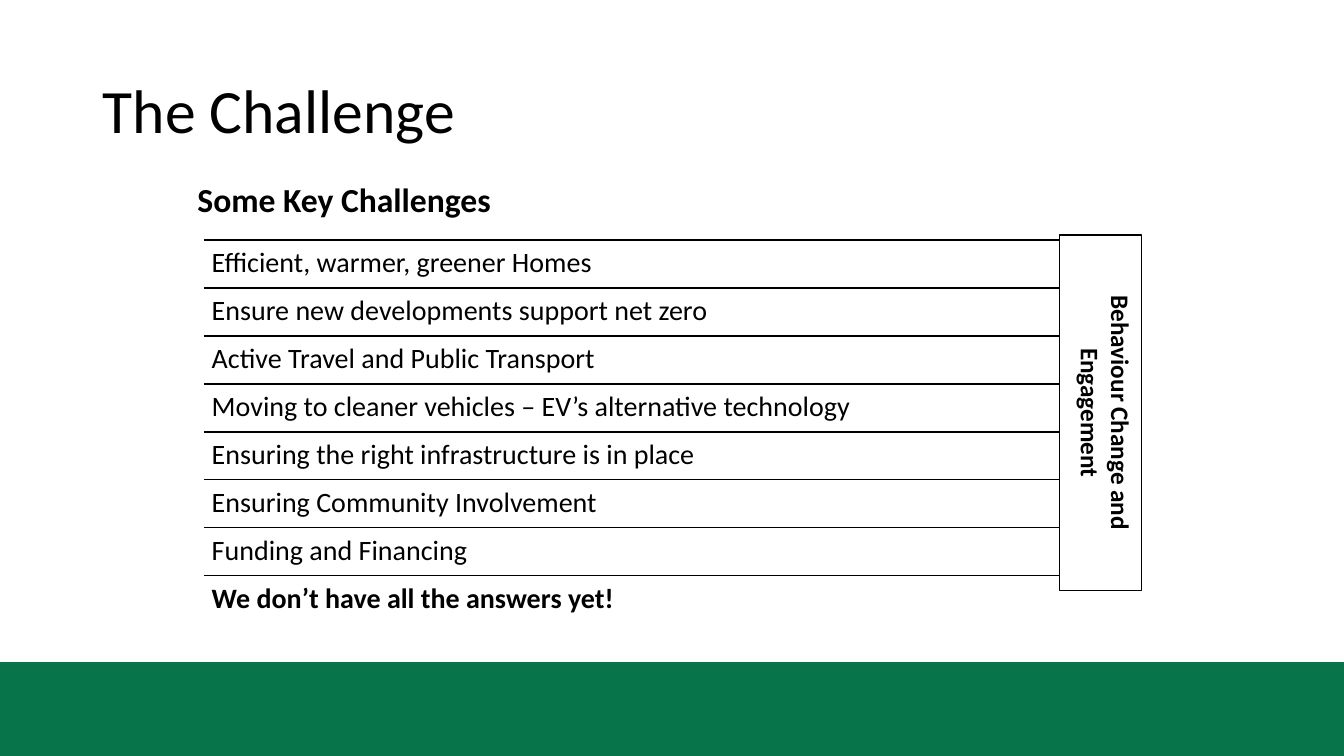
from dataclasses import dataclass, field

from lxml.etree import SubElement
from pptx import Presentation
from pptx.dml.color import RGBColor as Rgb
from pptx.enum.shapes import MSO_CONNECTOR as Conn, MSO_SHAPE as Kind
from pptx.enum.text import MSO_ANCHOR as Anchor, MSO_AUTO_SIZE as Auto, PP_ALIGN as Align
from pptx.oxml.ns import qn
from pptx.util import Inches, Pt

HUES = {"ink": "000000", "paper": "FFFFFF", "band": "07744A"}
LEFT, TOP, WIDTH, PITCH = 2.02, 2.38, 8.58, 0.476


@dataclass
class Label:
    text: str
    box: tuple[float, float, float, float]
    size: int
    bold: bool = False
    space: float | None = 0.9
    align: Align = Align.LEFT
    frame: dict = field(default_factory=dict)


ROWS = [
    "Efficient, warmer, greener Homes",
    "Ensure new developments support net zero",
    "Active Travel and Public Transport",
    "Moving to cleaner vehicles – EV’s alternative technology",
    "Ensuring the right infrastructure is in place",
    "Ensuring Community Involvement",
    "Funding and Financing",
    "We don’t have all the answers yet!",
]
TITLE = Label("The Challenge", (0.92, 0.4, 11.5, 1.45), 44,
              frame={"vertical_anchor": Anchor.MIDDLE})
HEAD = Label("Some Key Challenges", (1.86, 1.53, 4.42, 0.7), 24, True,
             frame={"vertical_anchor": Anchor.BOTTOM})
SIDE = Label("Behaviour Change and Engagement", (10.51, 2.33, 0.81, 3.53), 18, True,
             None, Align.CENTER, {"auto_size": Auto.SHAPE_TO_FIT_TEXT})
PADS = {f"margin_{side}": Inches(0.08) for side in ("left", "top", "right", "bottom")}


def hue(name: str) -> Rgb:
    """Return the named colour."""
    return Rgb.from_string(HUES[name])


def apply(target, values: dict) -> None:
    """Set each attribute from a dict of values."""
    for name, value in values.items():
        setattr(target, name, value)


def write(shape, label: Label) -> None:
    """Place a shape and give it its formatted text."""
    places = map(Inches, label.box)
    apply(shape, dict(zip(("left", "top", "width", "height"), places)))
    frame = shape.text_frame
    base = {"word_wrap": True, "auto_size": Auto.NONE, "vertical_anchor": Anchor.TOP}
    apply(frame, base | label.frame)
    frame.text = label.text
    para = frame.paragraphs[0]
    apply(para, {"alignment": label.align, "line_spacing": label.space})
    font = para.runs[0].font
    apply(font, {"name": "Calibri", "size": Pt(label.size), "bold": label.bold})
    font.color.rgb = hue("ink")


def add_text(slide, label: Label) -> None:
    """Add a text box for a label."""
    write(slide.shapes.add_textbox(*map(Inches, label.box)), label)


def add_rect(slide, box: tuple[float, ...], fill: str):
    """Add a flat rectangle without an outline."""
    shape = slide.shapes.add_shape(Kind.RECTANGLE, *map(Inches, box))
    shape.shadow.inherit = False
    shape.fill.solid()
    shape.fill.fore_color.rgb = hue(fill)
    shape.line.fill.background()
    return shape


def ink_line(shape) -> None:
    """Give a shape a thin dark line."""
    shape.line.color.rgb = hue("ink")
    shape.line.width = Pt(1)


def add_rule(slide, y: float) -> None:
    """Draw one horizontal rule above a row."""
    ends = map(Inches, (LEFT, y, LEFT + WIDTH, y))
    rule = slide.shapes.add_connector(Conn.STRAIGHT, *ends)
    ink_line(rule)
    SubElement(rule.element.spPr, qn("a:effectLst"))


def main() -> None:
    """Build and save the slide."""
    deck = Presentation()
    apply(deck, {"slide_width": Inches(13.33), "slide_height": Inches(7.5)})
    slide = deck.slides.add_slide(deck.slide_layouts[5])
    add_rect(slide, (0, 6.57, 13.33, 0.93), "band")
    write(slide.shapes.title, TITLE)
    add_text(slide, HEAD)
    for i, text in enumerate(ROWS):
        y = TOP + i * PITCH
        add_rule(slide, y)
        last = i == len(ROWS) - 1
        add_text(slide, Label(text, (LEFT, y, WIDTH, PITCH), 20, last, frame=PADS))
    side = add_rect(slide, SIDE.box, "paper")
    ink_line(side)
    write(side, SIDE)
    side.element.txBody.bodyPr.set("vert", "vert")
    deck.save("out.pptx")


if __name__ == "__main__":
    main()
